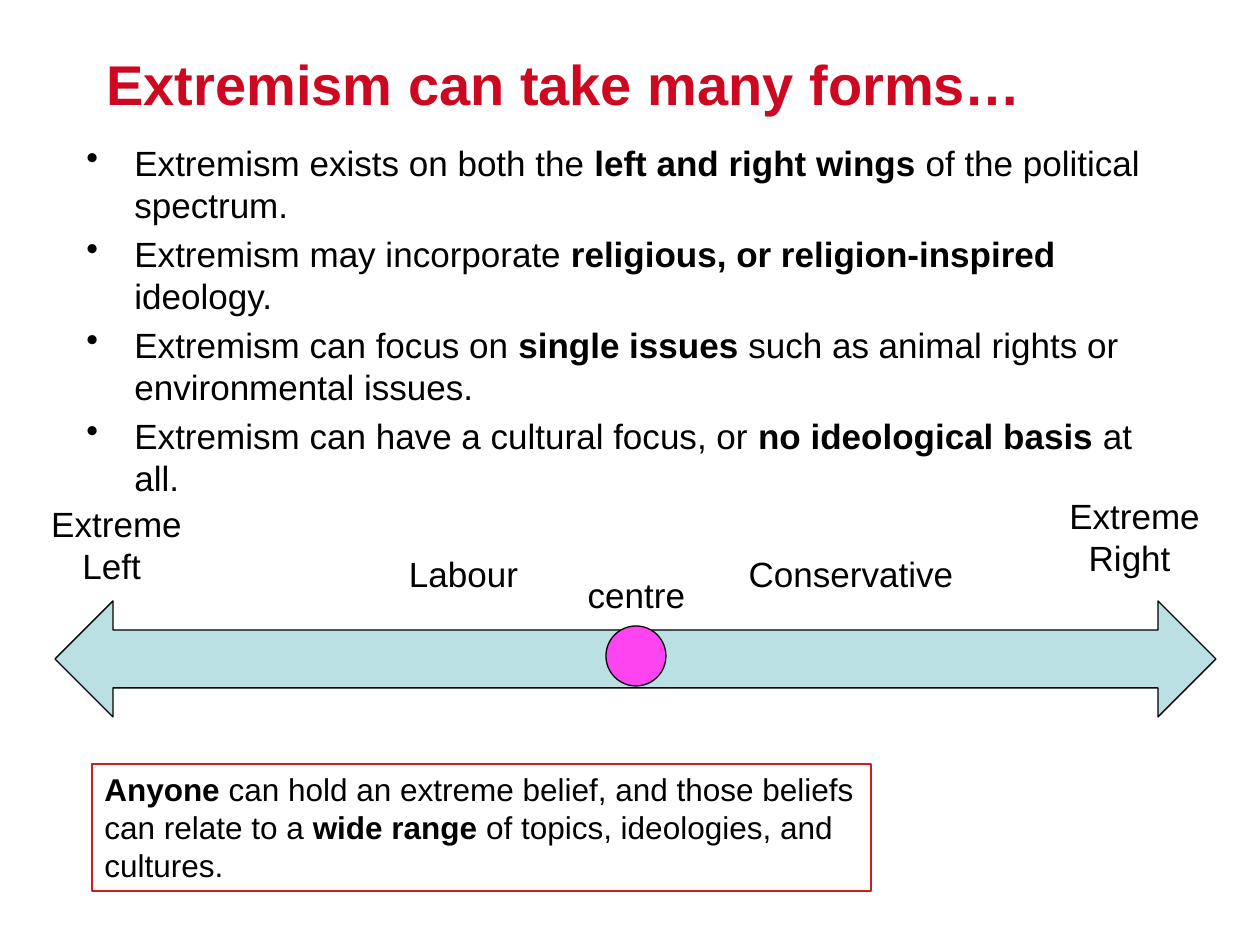
import pptx
import pptx.util
import pptx.dml.color
import pptx.enum.shapes
import pptx.enum.text
import pptx.oxml
import pptx.oxml.ns

SHAPE = pptx.enum.shapes.MSO_SHAPE
ALIGN = pptx.enum.text.PP_ALIGN
ANCHOR = pptx.enum.text.MSO_ANCHOR

BULLETS = [
    "Extremism exists on both the **left and right wings **of the political spectrum.",
    "Extremism may incorporate **religious, or religion-inspired** ideology.",
    "Extremism can focus on **single issues** such as animal rights or environmental issues.",
    "Extremism can have a cultural focus, or **no ideological basis **at all.",
]

LABELS = [
    ("centre", 567, 567, 139, 55),
    ("Labour", 394, 546, 139, 55),
    ("Conservative", 727, 546, 248, 55),
    ("Extreme Left ", 32, 496, 169, 97),
    ("Extreme Right ", 1050, 488, 169, 97),
]


class SlideBuilder:
    FONT = "Arial"
    EMU_PER_PX = 914400 / 126
    COLORS = {
        "title": "CD0921",
        "border": "CF1C21",
        "text": "000000",
        "arrow": "BBE0E3",
        "dot": "FE44F1",
    }

    def __init__(self, prs):
        prs.slide_width = self.px(1260)
        prs.slide_height = self.px(945)
        self.slide = prs.slides.add_slide(prs.slide_layouts[6])
        self.shapes = self.slide.shapes

    def px(self, n):
        return pptx.util.Emu(round(n * self.EMU_PER_PX))

    def color(self, name):
        return pptx.dml.color.RGBColor.from_string(self.COLORS[name])

    def start_group(self):
        self.shapes = self.slide.shapes.add_group_shape().shapes

    def add_runs(self, p, text, size, color="text", bold=False):
        for i, part in enumerate(text.split("**")):
            if part:
                r = p.add_run()
                r.text = part
                r.font.name = self.FONT
                r.font.size = pptx.util.Pt(size)
                r.font.bold = bold or i % 2 == 1
                r.font.color.rgb = self.color(color)

    def text(self, text, x, y, w, h, size=20, color="text", bold=False,
             align=ALIGN.LEFT, anchor=ANCHOR.TOP):
        sp = self.shapes.add_textbox(*map(self.px, (x, y, w, h)))
        tf = sp.text_frame
        tf.word_wrap = True
        tf.vertical_anchor = anchor
        p = tf.paragraphs[0]
        p.alignment = align
        self.add_runs(p, text, size, color, bold)
        return sp

    def bullets(self, items, x, y, w, h, indent, size=20):
        tf = self.text("", x, y, w, h).text_frame
        for i, item in enumerate(items):
            p = tf.add_paragraph() if i else tf.paragraphs[0]
            if i:
                p.space_before = pptx.util.Pt(size * 0.2)
            pPr = p._p.get_or_add_pPr()
            pPr.set("marL", str(self.px(indent)))
            pPr.set("indent", str(-self.px(indent)))
            bu = pptx.oxml.parse_xml(
                '<a:buChar %s char="•"/>' % pptx.oxml.ns.nsdecls("a"))
            pPr.append(bu)
            self.add_runs(p, item, size)

    def shape(self, kind, x, y, w, h, fill):
        sp = self.shapes.add_shape(kind, *map(self.px, (x, y, w, h)))
        sp.shadow.inherit = False
        sp.fill.solid()
        sp.fill.fore_color.rgb = self.color(fill)
        sp.line.color.rgb = self.color("text")
        sp.line.width = pptx.util.Pt(0.75)

    def callout(self, text, x, y, w, h):
        sp = self.text(text, x, y, w, h, size=18)
        sp.line.color.rgb = self.color("border")
        sp.line.width = pptx.util.Pt(1.5)


def main():
    prs = pptx.Presentation()
    s = SlideBuilder(prs)
    s.text("Extremism can take many forms…", 94, 42, 1124, 83, size=32,
           color="title", bold=True, anchor=ANCHOR.MIDDLE)
    s.callout("**Anyone** can hold an extreme belief, and those beliefs can relate "
              "to a **wide range **of topics, ideologies, and cultures.",
              92, 764, 779, 127)
    s.bullets(BULLETS, 74, 135, 1123, 352, indent=48)
    s.start_group()
    s.shape(SHAPE.LEFT_RIGHT_ARROW, 55, 601, 1161, 116, "arrow")
    s.shape(SHAPE.OVAL, 606, 626, 60, 60, "dot")
    for text, *box in LABELS:
        s.text(text, *box, align=ALIGN.CENTER)
    prs.save("out.pptx")


if __name__ == "__main__":
    main()
